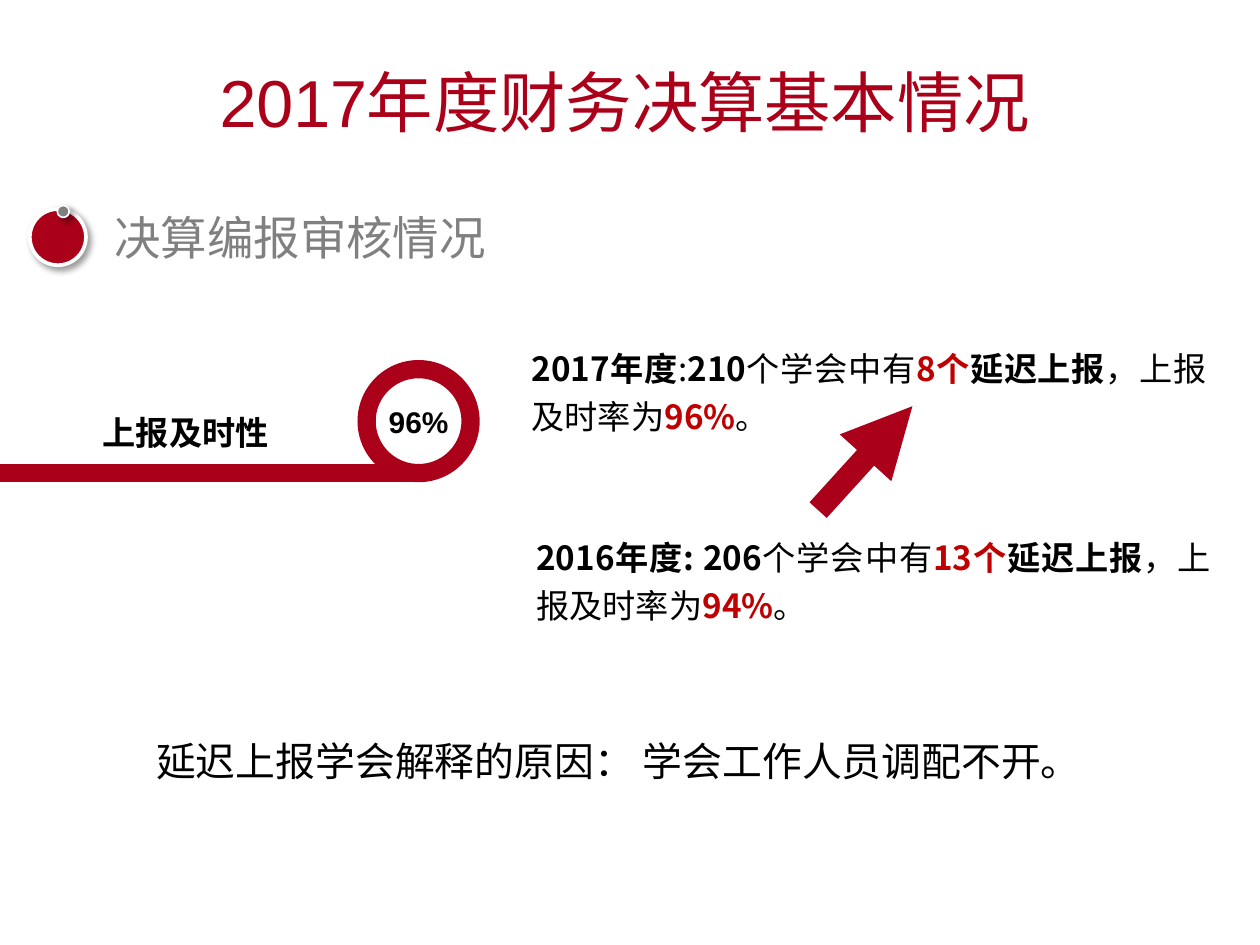
from lxml.etree import SubElement
from pptx import Presentation
from pptx.dml.color import RGBColor
from pptx.enum.shapes import MSO_CONNECTOR as Connector, MSO_SHAPE as Shape
from pptx.enum.text import MSO_ANCHOR as Anchor, PP_ALIGN as Align
from pptx.oxml.ns import qn
from pptx.util import Inches, Pt

COLORS = {"crimson": "AB0019", "alert": "C00000", "gray": "808080",
          "black": "000000", "white": "FFFFFF"}
LATIN, CJK = "Arial", "Noto Sans CJK SC"

TITLE = "2017年度财务决算基本情况"
SECTION = "决算编报审核情况"
MEASURE = "上报及时性"
RATE = "96%"
REASON = "延迟上报学会解释的原因： 学会工作人员调配不开。"
YEARS = [
    {"at": (4.45, 2.85, 5.65, 0.81), "heading": [("2017年度", True), (":", False), ("210", True)],
     "late": "8个", "rate": "96%"},
    {"at": (4.49, 4.43, 5.65, 0.81), "heading": [("2016年度: 206", True)],
     "late": "13个", "rate": "94%"},
]
BADGES = [((0.25, 1.75, 0.47, 0.47), "crimson", 2.25),
          ((0.48, 1.72, 0.1, 0.1), "gray", 1)]
RING = (3.07, 3.09, 0.87, 0.87)


def rgb(color):
    """Return the named colour."""
    return RGBColor.from_string(COLORS[color])


def write(shape, runs, size, font=CJK, align=Align.LEFT, spacing=1.0, inset=0.0):
    """Fill a shape with one paragraph of (text, colour, bold) runs."""
    frame = shape.text_frame
    frame.word_wrap = True
    frame.margin_left = frame.margin_right = Inches(inset)
    frame.margin_top = frame.margin_bottom = Inches(inset / 2)
    paragraph = frame.paragraphs[0]
    paragraph.alignment = align
    paragraph.line_spacing = spacing
    for text, color, bold in runs:
        run = paragraph.add_run()
        run.text = text
        run.font.size = Pt(size)
        run.font.name = font
        run.font.bold = bold
        run.font.color.rgb = rgb(color)
        SubElement(run.font._element, qn("a:ea"), typeface=CJK)


def add_text(slide, at, runs, size, **style):
    """Add a text box."""
    write(slide.shapes.add_textbox(*map(Inches, at)), runs, size, **style)


def add_circle(slide, at, fill, line, width):
    """Add an outlined circle without a shadow."""
    circle = slide.shapes.add_shape(Shape.OVAL, *map(Inches, at))
    circle.shadow.inherit = False
    circle.fill.solid()
    circle.fill.fore_color.rgb = rgb(fill)
    circle.line.color.rgb = rgb(line)
    circle.line.width = Pt(width)
    return circle


def cast_shadow(circle):
    """Give a circle a soft shadow to the lower right."""
    effects = circle._element.spPr.find(qn("a:effectLst"))
    shadow = SubElement(effects, qn("a:outerShdw"), blurRad=str(Pt(4)), dist=str(Pt(3)),
                        dir=str(45 * 60000), algn="tl", rotWithShape="0")
    tint = SubElement(shadow, qn("a:srgbClr"), val=COLORS["black"])
    SubElement(tint, qn("a:alpha"), val="40000")


def add_line(slide, start, end, width, arrow=False):
    """Add a crimson line, with an arrowhead at its end if asked."""
    line = slide.shapes.add_connector(Connector.STRAIGHT, *map(Inches, start + end))
    line.line.color.rgb = rgb("crimson")
    line.line.width = Pt(width)
    if arrow:
        SubElement(line.line._get_or_add_ln(), qn("a:tailEnd"), type="triangle")
    SubElement(line._element.spPr, qn("a:effectLst"))


def year_runs(year):
    """Compose the sentence on one year's late reports."""
    return [(text, "black", bold) for text, bold in year["heading"]] + [
        ("个学会中有", "black", False), (year["late"], "alert", True),
        ("延迟上报", "black", True), ("，上报及时率为", "black", False),
        (year["rate"], "alert", True), ("。", "black", False)]


def main():
    """Build the slide on timely reporting."""
    deck = Presentation()
    deck.slide_width, deck.slide_height = Inches(10.55), Inches(7.91)
    slide = deck.slides.add_slide(deck.slide_layouts[6])

    ring = add_circle(slide, RING, "white", "crimson", 11)
    ring.text_frame.vertical_anchor = Anchor.MIDDLE
    write(ring, [(RATE, "black", True)], 18, font=LATIN, align=Align.CENTER)
    left, top, width, height = RING
    base = top + height
    add_line(slide, (left + width / 2, base), (0, base), 11)

    add_text(slide, (0.96, 1.75, 3.49, 0.47), [(SECTION, "gray", False)], 28, font=LATIN)
    for at, fill, outline in BADGES:
        cast_shadow(add_circle(slide, at, fill, "white", outline))
    add_text(slide, (1.74, 0.46, 7.06, 0.77), [(TITLE, "crimson", False)], 40,
             font=LATIN, inset=0.1)
    add_text(slide, (0.67, 3.4, 1.77, 0.44), [(MEASURE, "black", True)], 20,
             align=Align.CENTER, inset=0.1)
    for year in YEARS:
        add_text(slide, year["at"], year_runs(year), 20, align=Align.JUSTIFY, spacing=1.2)
    add_text(slide, (1.21, 5.92, 8.13, 0.71), [(REASON, "black", False)], 24,
             spacing=1.5, inset=0.1)
    add_line(slide, (6.85, 4.27), (7.64, 3.4), 14, arrow=True)

    deck.save("out.pptx")


if __name__ == "__main__":
    main()
